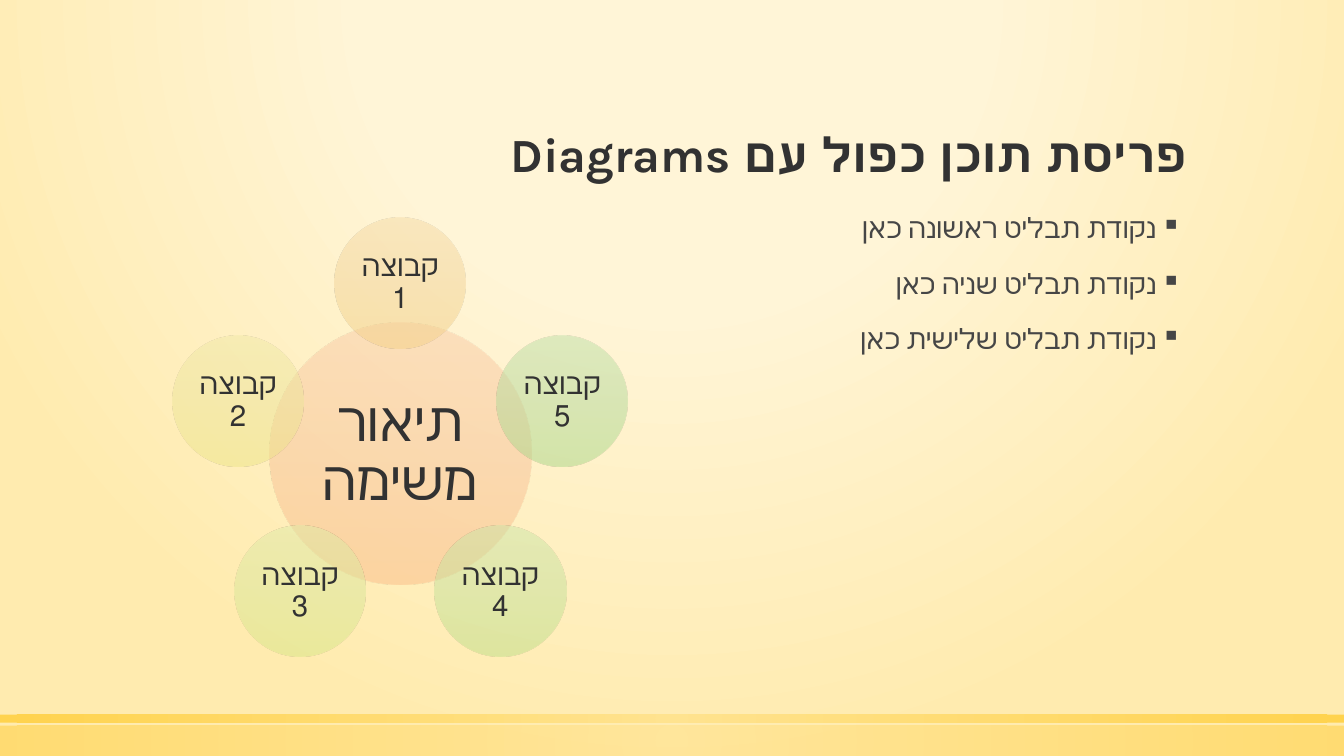
import math
from lxml import etree
from pptx import Presentation
from pptx.dml.color import RGBColor
from pptx.enum import shapes, text
from pptx.oxml import parse_xml
from pptx.oxml.ns import nsdecls, qn
from pptx.util import Inches, Pt

DARK = RGBColor(0x32, 0x32, 0x32)
GRAY = RGBColor(0x46, 0x46, 0x46)
CREAM = RGBColor(0xFF, 0xF5, 0xD7)
SAND = RGBColor(0xFF, 0xEB, 0xAF)
YELLOW = RGBColor(0xFF, 0xE1, 0x86)
AMBER = RGBColor(0xFF, 0xCD, 0x36)


def set_gradient(props, stops, focus=None):
    """Fill with (position, colour, opacity) stops: radial with a focus, else downward."""
    for tag in ("a:noFill", "a:solidFill", "a:gradFill"):
        for old in props.findall(qn(tag)):
            props.remove(old)
    gs = "".join(
        f'<a:gs pos="{pos * 1000}"><a:srgbClr val="{color}">'
        f'<a:alpha val="{opacity * 1000}"/></a:srgbClr></a:gs>'
        for pos, color, opacity in stops)
    if focus:
        l, t, r, b = (v * 1000 for v in focus)
        shade = (f'<a:path path="circle"><a:fillToRect l="{l}" t="{t}" '
                 f'r="{r}" b="{b}"/></a:path>')
    else:
        shade = '<a:lin ang="5400000" scaled="0"/>'
    fill = parse_xml(f'<a:gradFill {nsdecls("a")} rotWithShape="1">'
                     f'<a:gsLst>{gs}</a:gsLst>{shade}</a:gradFill>')
    geometry = props.find(qn("a:prstGeom"))
    if geometry is None:
        props.insert(0, fill)
    else:
        geometry.addnext(fill)


def format_paragraph(p, size, color, align):
    p.alignment = align
    p.line_spacing = 0.9
    p.font.size, p.font.name, p.font.color.rgb = Pt(size), "Karla", color
    p._p.get_or_add_pPr().set("rtl", "1")


prs = Presentation()
prs.slide_width, prs.slide_height = Inches(13.33), Inches(7.5)
s = prs.slides.add_slide(prs.slide_layouts[5])

# Background
s.background.fill.solid()
set_gradient(s._element.cSld.find(qn("p:bg")).find(qn("p:bgPr")),
             [(0, CREAM, 59), (40, CREAM, 66), (100, SAND, 100)], (50, -80, 50, 180))

# Bottom bands
for top, height, opacity in ((7.2, 0.3, 50), (7.09, 0.08, 80)):
    band = s.shapes.add_shape(shapes.MSO_SHAPE.RECTANGLE, 0, Inches(top),
                              prs.slide_width, Inches(height))
    band.shadow.inherit = False
    band.line.fill.background()
    set_gradient(band._element.spPr,
                 [(0, YELLOW, opacity), (100, AMBER, opacity)], (50, 50, 50, 50))

# Title
title = s.shapes.title
title.left, title.top = Inches(1.47), Inches(0.51)
title.width, title.height = Inches(10.4), Inches(1.35)
tf = title.text_frame
tf.text = "פריסת תוכן כפול עם Diagrams"
tf.auto_size = text.MSO_AUTO_SIZE.NONE
tf.vertical_anchor = text.MSO_ANCHOR.BOTTOM
format_paragraph(tf.paragraphs[0], 34, DARK, text.PP_ALIGN.RIGHT)
tf.paragraphs[0].font.bold = True

# Bullet points
tf = s.shapes.add_textbox(Inches(6.87), Inches(2.08), Inches(5), Inches(4.51)).text_frame
tf.word_wrap = True
tf.text = "\n".join(f"נקודת תבליט {order} כאן" for order in ("ראשונה", "שניה", "שלישית"))
for p in tf.paragraphs:
    format_paragraph(p, 20, GRAY, text.PP_ALIGN.RIGHT)
    p.space_before = Pt(18)
    pPr = p._p.get_or_add_pPr()
    pPr.set("marL", str(Inches(0.3)))
    pPr.set("indent", str(Inches(-0.25)))
    bullet = etree.Element(qn("a:buChar"), char="▪")
    pPr.find(qn("a:defRPr")).addprevious(bullet)

# Radial diagram: the task in the middle, groups counter-clockwise from the top
CENTER_X, CENTER_Y, RING = 3.97, 4.5, 1.69
GROUP_COLORS = (
    ("F6DBA8", "F3D49A", "F5D187"),
    ("F1EAA8", "EDE59A", "EEE587"),
    ("E0EBA8", "DAE79A", "D8E787"),
    ("CDE6A8", "C5E19A", "BEE088"),
    ("BFE0A9", "B4DA9B", "A9D889"),
)
circles = [("תיאור משימה", CENTER_X, CENTER_Y, 2.6, 39, 0.05, ("FACDA9", "F8C39A", "FBBB87"))]
for i, colors in enumerate(GROUP_COLORS):
    angle = 2 * math.pi * i / len(GROUP_COLORS)
    circles.append((f"קבוצה {i + 1}", CENTER_X - RING * math.sin(angle),
                    CENTER_Y - RING * math.cos(angle), 1.3, 21, 0.03, colors))

for label, x, y, size, font_size, inset, colors in circles:
    sp = s.shapes.add_shape(shapes.MSO_SHAPE.OVAL, Inches(x - size / 2), Inches(y - size / 2),
                            Inches(size), Inches(size))
    sp.shadow.inherit = False
    sp.line.fill.background()
    set_gradient(sp._element.spPr, [(pos, c, 50) for pos, c in zip((0, 50, 100), colors)])
    tf = sp.text_frame
    tf.text = label
    tf.word_wrap = True
    tf.vertical_anchor = text.MSO_ANCHOR.MIDDLE
    tf.margin_left = tf.margin_right = tf.margin_top = tf.margin_bottom = Inches(inset)
    format_paragraph(tf.paragraphs[0], font_size, DARK, text.PP_ALIGN.CENTER)

prs.save("out.pptx")
